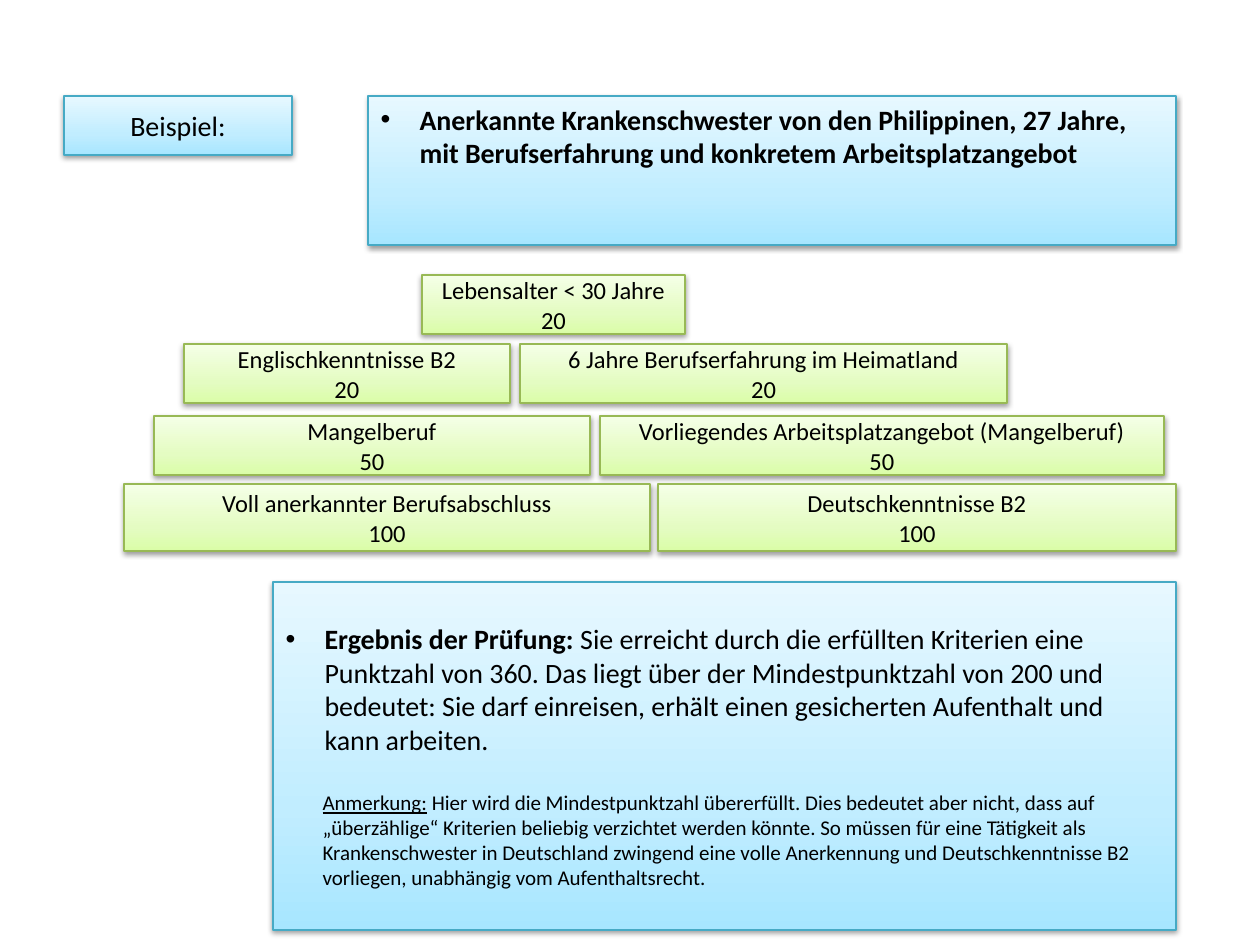
from dataclasses import dataclass

from pptx import Presentation
from pptx.dml.color import RGBColor
from pptx.enum.shapes import MSO_SHAPE as Shape
from pptx.enum.text import MSO_ANCHOR as Anchor, MSO_AUTO_SIZE as AutoSize, PP_ALIGN as Align
from pptx.oxml import parse_xml
from pptx.oxml.ns import nsdecls
from pptx.util import Emu, Pt

PX_PER_INCH = 126


def px(n: int) -> Emu:
    return Emu(round(n * 914400 / PX_PER_INCH))


@dataclass(frozen=True)
class Palette:
    low: str
    mid: str
    high: str
    line: str


@dataclass(frozen=True)
class Theme:
    blue: Palette = Palette("A7E6FF", "C1EDFF", "E7F8FF", "46AAC5")
    green: Palette = Palette("DAFDA7", "E4FCC2", "F5FFE7", "98B955")
    text: str = "000000"
    shadow: str = "000000"
    font: str = "Calibri"
    main: int = 16
    criterion: int = 14
    note: int = 12


@dataclass(frozen=True)
class Box:
    x: int
    y: int
    w: int
    h: int


@dataclass(frozen=True)
class Criterion:
    label: str
    points: int
    width: int


@dataclass(frozen=True)
class Row:
    x: int
    y: int
    h: int
    gap: int
    criteria: tuple[Criterion, ...]


THEME = Theme()

# Criteria, from the top of the pyramid to its base
ROWS = (
    Row(422, 275, 59, 0, (Criterion("Lebensalter < 30 Jahre", 20, 263),)),
    Row(184, 344, 59, 10, (Criterion("Englischkenntnisse B2", 20, 326),
                           Criterion("6 Jahre Berufserfahrung im Heimatland", 20, 487))),
    Row(154, 416, 59, 10, (Criterion("Mangelberuf", 50, 436),
                           Criterion("Vorliegendes Arbeitsplatzangebot (Mangelberuf)", 50, 564))),
    Row(124, 484, 67, 8, (Criterion("Voll anerkannter Berufsabschluss", 100, 526),
                          Criterion("Deutschkenntnisse B2", 100, 518))),
)

INTRO = ("Anerkannte Krankenschwester von den Philippinen, 27 Jahre, "
         "mit Berufserfahrung und konkretem Arbeitsplatzangebot")
RESULT = ("Sie erreicht durch die erfüllten Kriterien eine Punktzahl von 360. "
          "Das liegt über der Mindestpunktzahl von 200 und bedeutet: Sie darf einreisen, "
          "erhält einen gesicherten Aufenthalt und kann arbeiten.")
NOTE = (" Hier wird die Mindestpunktzahl übererfüllt. Dies bedeutet aber nicht, dass auf "
        "„überzählige“ Kriterien beliebig verzichtet werden könnte. So müssen für eine "
        "Tätigkeit als Krankenschwester in Deutschland zwingend eine volle Anerkennung und "
        "Deutschkenntnisse B2 vorliegen, unabhängig vom Aufenthaltsrecht.")


def set_all(obj, values: dict) -> None:
    for name, value in values.items():
        setattr(obj, name, value)


def style_box(sp, box: Box, palette: Palette, anchor=Anchor.MIDDLE) -> None:
    """Place a shape and give it gradient, outline and soft shadow."""
    set_all(sp, {"left": px(box.x), "top": px(box.y), "width": px(box.w), "height": px(box.h)})
    stops = "".join(
        f'<a:gs pos="{pos}"><a:srgbClr val="{color}"/></a:gs>'
        for pos, color in ((0, palette.low), (35000, palette.mid), (100000, palette.high)))
    sp_pr = sp._element.spPr
    sp_pr.append(parse_xml(
        f'<a:gradFill {nsdecls("a")} rotWithShape="1"><a:gsLst>{stops}</a:gsLst>'
        '<a:lin ang="16200000" scaled="1"/></a:gradFill>'))
    sp.line.color.rgb = RGBColor.from_string(palette.line)
    sp.line.width = Pt(0.75)
    sp_pr.append(parse_xml(
        f'<a:effectLst {nsdecls("a")}><a:outerShdw blurRad="40000" dist="20000" dir="5400000" '
        f'rotWithShape="0"><a:srgbClr val="{THEME.shadow}"><a:alpha val="38000"/></a:srgbClr>'
        '</a:outerShdw></a:effectLst>'))
    set_all(sp.text_frame, {"word_wrap": True, "auto_size": AutoSize.NONE,
                            "vertical_anchor": anchor})


def add_run(p, text: str, size: int, **formats) -> None:
    r = p.add_run()
    r.text = text
    set_all(r.font, {"name": THEME.font, "size": Pt(size), "bold": False, **formats})
    r.font.color.rgb = RGBColor.from_string(THEME.text)


def format_paragraph(p, align=Align.LEFT, before: int = 0) -> None:
    set_all(p, {"alignment": align, "space_before": Pt(before), "space_after": Pt(0)})


def indent(p, left: int, first: int) -> None:
    p_pr = p._p.get_or_add_pPr()
    p_pr.set("marL", str(px(left)))
    p_pr.set("indent", str(px(first)))


def draw_row(s, row: Row) -> None:
    x = row.x
    for c in row.criteria:
        sp = s.shapes.add_shape(Shape.RECTANGLE, 0, 0, 0, 0)
        style_box(sp, Box(x, row.y, c.width, row.h), THEME.green)
        tf = sp.text_frame
        for p, text in ((tf.paragraphs[0], c.label), (tf.add_paragraph(), str(c.points))):
            format_paragraph(p, Align.CENTER)
            add_run(p, text, THEME.criterion)
        x += c.width + row.gap


def main() -> None:
    prs = Presentation()
    set_all(prs, {"slide_width": px(1260), "slide_height": px(945)})
    s = prs.slides.add_slide(prs.slide_layouts[3])
    title, intro, result = list(s.placeholders)[:3]
    for extra in list(s.placeholders)[3:]:
        extra._element.getparent().remove(extra._element)

    # Heading
    style_box(title, Box(64, 96, 228, 59), THEME.blue)
    p = title.text_frame.paragraphs[0]
    format_paragraph(p, Align.CENTER)
    add_run(p, "Beispiel:", THEME.main)

    # Person in the example
    style_box(intro, Box(368, 96, 808, 149), THEME.blue, Anchor.TOP)
    p = intro.text_frame.paragraphs[0]
    format_paragraph(p)
    indent(p, 39, -39)
    add_run(p, INTRO, THEME.main, bold=True)

    # Pyramid of criteria
    for row in ROWS:
        draw_row(s, row)

    # Result and remark
    style_box(result, Box(273, 582, 903, 348), THEME.blue)
    tf = result.text_frame
    p = tf.paragraphs[0]
    format_paragraph(p)
    indent(p, 39, -39)
    add_run(p, "Ergebnis der Prüfung: ", THEME.main, bold=True)
    add_run(p, RESULT, THEME.main)

    p = tf.add_paragraph()
    format_paragraph(p, before=19)
    indent(p, 37, 0)
    p._p.get_or_add_pPr().append(parse_xml(f'<a:buNone {nsdecls("a")}/>'))
    add_run(p, "Anmerkung:", THEME.note, underline=True)
    add_run(p, NOTE, THEME.note)

    prs.save("out.pptx")


if __name__ == "__main__":
    main()
